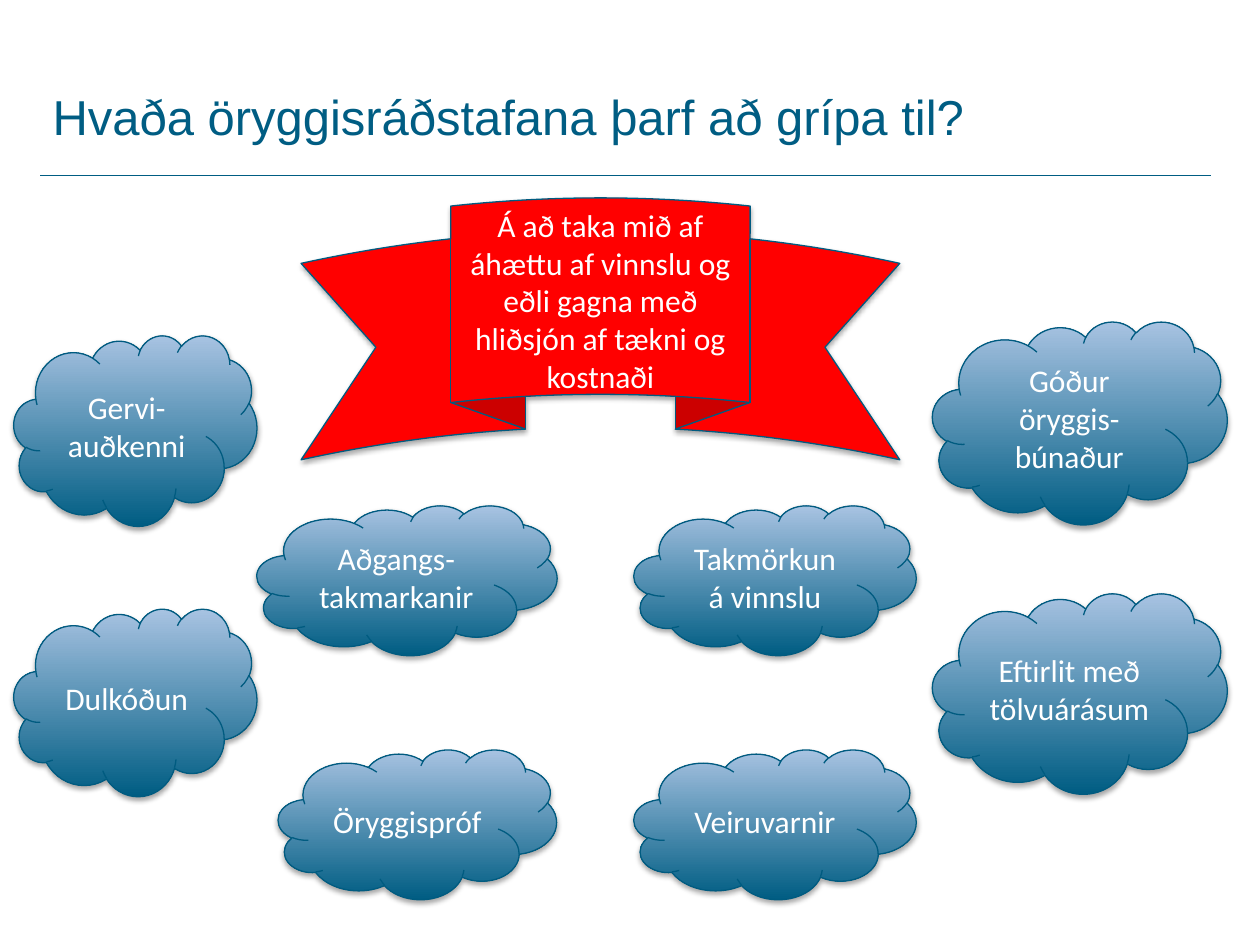
from lxml import etree
from pptx import Presentation
from pptx.dml.color import RGBColor
from pptx.enum import shapes, text
from pptx.oxml import ns
from pptx.util import Cm, Pt

TITLE = "Hvaða öryggisráðstafana þarf að grípa til?"
RIBBON = ("Á að taka mið af áhættu af vinnslu og eðli gagna með "
          "hliðsjón af tækni og kostnaði")

LEFT, RIGHT = (0.28, 4.9), (18.8, 5.94)
MID_RIGHT = (12.78, 5.69)
UPPER, LOWER = (10.19, 3.02), (15.11, 3.02)
CLOUDS = [
    ("Gervi-auðkenni", LEFT, (6.76, 3.84)),
    ("Aðgangs-takmarkanir", (5.18, 6.05), UPPER),
    ("Öryggispróf", (5.61, 5.61), LOWER),
    ("Dulkóðun", LEFT, (12.27, 3.78)),
    ("Veiruvarnir", MID_RIGHT, LOWER),
    ("Góður öryggis-búnaður", RIGHT, (6.48, 4.09)),
    ("Eftirlit með tölvuárásum", RIGHT, (11.96, 4.04)),
    ("Takmörkun á vinnslu", MID_RIGHT, UPPER),
]

TEAL, EDGE, SKY, RED, WHITE = "005D83", "005B80", "A8C3E2", "FF0000", "FFFFFF"


def rgb(value):
    return RGBColor.from_string(value)


def write(tf, content, size=18, font="Calibri", color=WHITE,
          align=text.PP_ALIGN.CENTER, anchor=text.MSO_ANCHOR.MIDDLE):
    tf.word_wrap = True
    tf.vertical_anchor = anchor
    p = tf.paragraphs[0]
    p.alignment = align
    r = p.add_run()
    r.text = content
    r.font.size = Pt(size)
    r.font.name = font
    r.font.color.rgb = rgb(color)


def add_shadow(sp):
    sp.shadow.inherit = False
    effects = sp._element.spPr.find(ns.qn("a:effectLst"))
    outer = etree.SubElement(effects, ns.qn("a:outerShdw"), blurRad=str(Pt(3.1)),
                             dist=str(Pt(1.8)), dir="5400000", rotWithShape="0")
    tint = etree.SubElement(outer, ns.qn("a:srgbClr"), val="000000")
    etree.SubElement(tint, ns.qn("a:alpha"), val="35000")


def add_figure(s, kind, content, x, y, w, h, colors):
    sp = s.shapes.add_shape(kind, Cm(x), Cm(y), Cm(w), Cm(h))
    if len(colors) == 1:
        sp.fill.solid()
        sp.fill.fore_color.rgb = rgb(colors[0])
    else:
        sp.fill.gradient()
        sp.fill.gradient_angle = 90
        for stop, color in zip(sp.fill.gradient_stops, colors):
            stop.color.rgb = rgb(color)
    sp.line.color.rgb = rgb(EDGE)
    sp.line.width = Pt(0.75)
    add_shadow(sp)
    write(sp.text_frame, content)


def main():
    prs = Presentation()
    prs.slide_width, prs.slide_height = Cm(25.4), Cm(19.05)
    s = prs.slides.add_slide(prs.slide_layouts[6])

    rule = s.shapes.add_connector(shapes.MSO_CONNECTOR.STRAIGHT,
                                  Cm(0.81), Cm(3.53), Cm(24.41), Cm(3.53))
    rule.line.color.rgb = rgb(TEAL)
    rule.line.width = Pt(0.35)
    etree.SubElement(rule._element.spPr, ns.qn("a:effectLst"))

    title = s.shapes.add_textbox(Cm(0.81), Cm(1.55), Cm(23.6), Cm(1.8))
    title.text_frame.margin_top = Cm(0.2)
    write(title.text_frame, TITLE, size=28, font="Arial", color=TEAL,
          align=text.PP_ALIGN.LEFT, anchor=text.MSO_ANCHOR.TOP)

    for content, (x, w), (y, h) in CLOUDS:
        add_figure(s, shapes.MSO_SHAPE.CLOUD, content, x, y, w, h, (TEAL, SKY))
    add_figure(s, shapes.MSO_SHAPE.CURVED_UP_RIBBON, RIBBON,
               6.07, 3.99, 12.07, 5.28, (RED,))

    prs.save("out.pptx")


if __name__ == "__main__":
    main()
